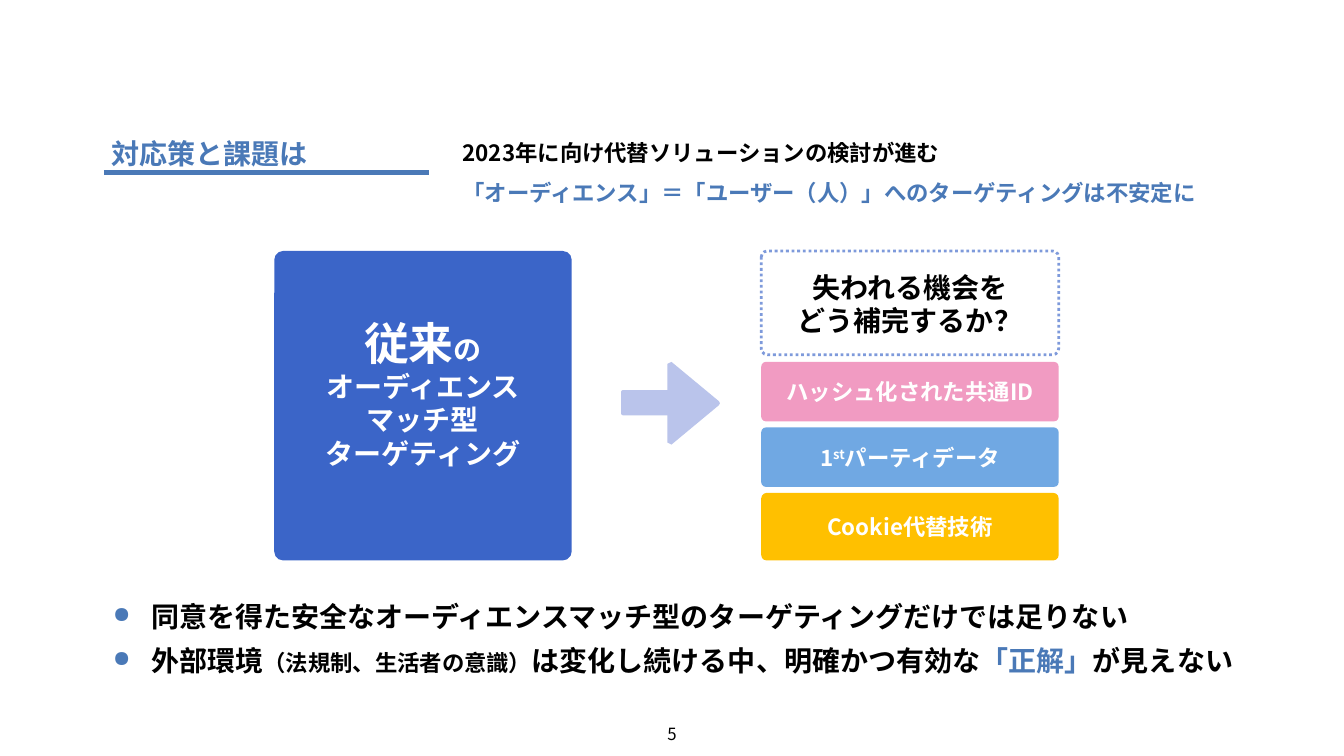
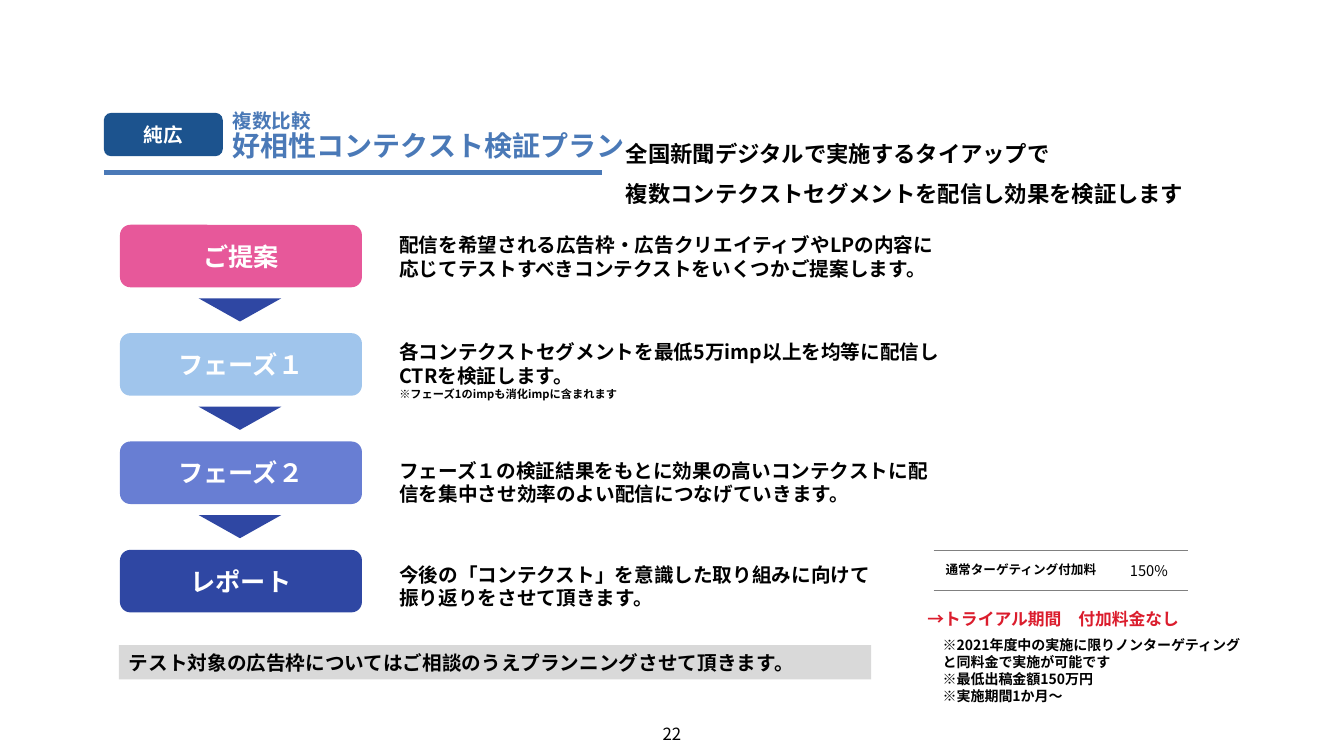
from dataclasses import dataclass

from lxml.etree import SubElement
from pptx import Presentation
from pptx.dml.color import RGBColor
from pptx.enum.dml import MSO_LINE
from pptx.enum.shapes import MSO_CONNECTOR, MSO_SHAPE
from pptx.enum.text import MSO_ANCHOR, MSO_AUTO_SIZE, PP_ALIGN
from pptx.oxml.ns import qn
from pptx.util import Inches, Pt


@dataclass(frozen=True)
class Theme:
    font: str = "Noto Sans CJK JP"
    black: str = "000000"
    white: str = "FFFFFF"
    accent: str = "4A79B7"
    tag: str = "1C538E"
    royal: str = "3B65C8"
    navy: str = "2F47A3"
    periwinkle: str = "687ED3"
    pale_blue: str = "A0C5EC"
    sky: str = "70A8E3"
    dots: str = "7E9ADB"
    lavender: str = "BAC4EB"
    pink: str = "F19BC2"
    magenta: str = "E7589A"
    amber: str = "FFC000"
    red: str = "DB1D2D"
    band: str = "D9D9D9"
    rule: str = "808080"
    hero: float = 32
    title: float = 20
    step: float = 18
    lead: float = 16
    body: float = 14
    small: float = 12
    price: float = 10.5
    note: float = 10
    label: float = 9
    tiny: float = 8


T = Theme()
MID, TOP = MSO_ANCHOR.MIDDLE, MSO_ANCHOR.TOP
LEFT, CENTER, RIGHT = PP_ALIGN.LEFT, PP_ALIGN.CENTER, PP_ALIGN.RIGHT
PAD = (0.09, 0.09, 0.09, 0.09)
INSET = (0.1, 0.05, 0.1, 0.05)


def rgb(value):
    return RGBColor.from_string(value)


def add_bullet(p):
    pPr = p._p.get_or_add_pPr()
    pPr.set("marL", str(Inches(0.38)))
    pPr.set("indent", str(-Inches(0.38)))
    SubElement(SubElement(pPr, qn("a:buClr")), qn("a:srgbClr"), val=T.accent)
    SubElement(pPr, qn("a:buSzPct"), val="80000")
    SubElement(pPr, qn("a:buChar"), char="●")


def add_run(p, text, size, color, bold, sup=False):
    r = p.add_run()
    r.text = text
    r.font.size = Pt(size)
    r.font.bold = bold
    r.font.name = T.font
    r.font.color.rgb = rgb(color)
    rPr = r._r.get_or_add_rPr()
    SubElement(rPr, qn("a:ea"), typeface=T.font)
    if sup:
        rPr.set("baseline", "30000")


def write(tf, paras, size, color=T.black, bold=True, align=LEFT, spacing=None,
          anchor=MID, inset=INSET, bullets=False):
    tf.vertical_anchor = anchor
    tf.margin_left, tf.margin_top, tf.margin_right, tf.margin_bottom = map(Inches, inset)
    for i, runs in enumerate(paras):
        p = tf.add_paragraph() if i else tf.paragraphs[0]
        if bullets:
            add_bullet(p)
        p.alignment = align
        if spacing:
            p.line_spacing = spacing
        for text, changes in [(runs, {})] if isinstance(runs, str) else runs:
            add_run(p, text, **{"size": size, "color": color, "bold": bold, **changes})


def add_text(s, box, paras, size, wrap=True, grow=True, **style):
    tf = s.shapes.add_textbox(*map(Inches, box)).text_frame
    tf.word_wrap = wrap
    tf.auto_size = MSO_AUTO_SIZE.SHAPE_TO_FIT_TEXT if grow else MSO_AUTO_SIZE.NONE
    write(tf, paras, size, **style)


def paint(sp, fill):
    sp.shadow.inherit = False
    if fill:
        sp.fill.solid()
        sp.fill.fore_color.rgb = rgb(fill)
    else:
        sp.fill.background()
    sp.line.fill.background()


def add_box(s, box, fill=None, kind=MSO_SHAPE.ROUNDED_RECTANGLE, adj=None):
    sp = s.shapes.add_shape(kind, *map(Inches, box))
    paint(sp, fill)
    if adj is not None:
        sp.adjustments[0] = adj
    return sp


def add_label(s, box, fill, text, size, adj=None):
    sp = add_box(s, box, fill, adj=adj)
    write(sp.text_frame, [text], size, color=T.white, align=CENTER)


def add_rule(s, left, right, y, color=T.accent, width=3.5):
    ends = map(Inches, (left, y, right, y))
    line = s.shapes.add_connector(MSO_CONNECTOR.STRAIGHT, *ends)
    line.line.color.rgb = rgb(color)
    line.line.width = Pt(width)
    SubElement(line._element.spPr, qn("a:effectLst"))


def add_frame(prs, number, title, title_box, rule_right, lead, lead_box):
    s = prs.slides.add_slide(prs.slide_layouts[6])
    add_text(s, title_box, title, T.title, wrap=False, color=T.accent, spacing=0.9)
    add_rule(s, 1.03, rule_right, 1.71)
    add_text(s, lead_box, lead, T.lead, spacing=1.5, anchor=TOP)
    add_text(s, (6.23, 7.08, 0.87, 0.4), [number], T.small, grow=False,
             bold=False, align=CENTER)
    return s


def add_block_arrow(s):
    head = [(6.66, 3.59), (7.13, 3.98), (7.14, 4), (7.13, 4.02),
            (6.66, 4.41), (6.62, 4.39), (6.62, 3.61)]
    points = [(Inches(x), Inches(y)) for x, y in head]
    builder = s.shapes.build_freeform(*points[0])
    builder.add_line_segments(points[1:], close=True)
    paint(builder.convert_to_shape(), T.lavender)
    add_box(s, (6.16, 3.87, 0.61, 0.25), T.lavender, adj=0.08)


def build_issues(prs):
    s = add_frame(
        prs, "5", ["対応策と課題は"], (1.01, 1.34, 2.17, 0.41), 4.25,
        ["2023年に向け代替ソリューションの検討が進む",
         [("「オーディエンス」＝「ユーザー（人）」へのターゲティングは不安定に",
           {"color": T.accent})]],
        (4.49, 1.2, 8.53, 0.87))

    past = add_box(s, (2.72, 2.49, 2.95, 3.07), T.royal, adj=0.03)
    write(past.text_frame,
          [[("従来", {"size": T.hero}), ("の", {})],
           "オーディエンス", "マッチ型", "ターゲティング"],
          T.title, color=T.white, align=CENTER, inset=(0.1, 0.05, 0.1, 0.31))
    add_block_arrow(s)

    question = add_box(s, (7.55, 2.49, 2.95, 1.03), adj=0.06)
    question.line.color.rgb = rgb(T.dots)
    question.line.width = Pt(2)
    question.line.dash_style = MSO_LINE.ROUND_DOT
    write(question.text_frame, ["失われる機会を", "どう補完するか？"], T.title,
          align=CENTER, inset=(0.1, 0.02, 0.1, 0))

    options = [
        (T.pink, 0.59, "ハッシュ化された共通ID"),
        (T.sky, 0.59, [("1", {}), ("st", {"sup": True}), ("パーティデータ", {})]),
        (T.amber, 0.67, "Cookie代替技術"),
    ]
    for i, (fill, height, text) in enumerate(options):
        add_label(s, (7.55, 3.59 + 0.65 * i, 2.95, height), fill, text, T.lead, adj=0.08)

    add_text(s, (1.03, 5.75, 11.96, 1.06),
             ["同意を得た安全なオーディエンスマッチ型のターゲティングだけでは足りない",
              [("外部環境", {}), ("（法規制、生活者の意識）", {"size": T.lead}),
               ("は変化し続ける中、明確かつ有効な", {}),
               ("「正解」", {"color": T.accent}), ("が見えない", {})]],
             T.title, spacing=1.3, inset=PAD, bullets=True)


def add_steps(s):
    steps = [
        ("ご提案", T.magenta, (2.22, 5.56, 0.65),
         ["配信を希望される広告枠・広告クリエイティブやLPの内容に応じて"
          "テストすべきコンテクストをいくつかご提案します。"]),
        ("フェーズ１", T.pale_blue, (3.28, 5.66, 0.79),
         ["各コンテクストセグメントを最低5万imp以上を均等に配信しCTRを検証します。",
          [("※フェーズ1のimpも消化impに含まれます", {"size": T.tiny})]]),
        ("フェーズ２", T.periwinkle, (4.46, 5.56, 0.65),
         ["フェーズ１の検証結果をもとに効果の高いコンテクストに"
          "配信を集中させ効率のよい配信につなげていきます。"]),
        ("レポート", T.navy, (5.49, 5.88, 0.65),
         ["今後の「コンテクスト」を意識した取り組みに向けて", "振り返りをさせて頂きます。"]),
    ]
    for i, (name, fill, (top, width, height), paras) in enumerate(steps):
        y = 2.23 + 1.075 * i
        add_label(s, (1.19, y, 2.4, 0.62), fill, name, T.step)
        add_text(s, (3.87, top, width, height), paras, T.body, inset=PAD)
        if i < len(steps) - 1:
            pointer = add_box(s, (1.97, y + 0.73, 0.82, 0.23), T.navy,
                              MSO_SHAPE.FLOWCHART_MERGE)


def add_pricing(s):
    for y in (5.46, 5.86):
        add_rule(s, 9.26, 11.78, y, T.rule, 0.5)
    add_text(s, (9.28, 5.53, 1.85, 0.25), ["通常ターゲティング付加料"], T.label, anchor=TOP)
    add_text(s, (10.44, 5.52, 1.24, 0.28), ["150%"], T.price, bold=False, align=RIGHT)
    add_text(s, (9.1, 5.99, 2.86, 0.3), ["→トライアル期間　付加料金なし"], T.small,
             color=T.red)
    add_text(s, (9.26, 6.22, 3.15, 0.86),
             ["※2021年度中の実施に限りノンターゲティングと同料金で実施が可能です",
              "※最低出稿金額150万円", "※実施期間1か月～"], T.note, inset=PAD)


def build_plan(prs):
    s = add_frame(
        prs, "22",
        [[("複数比較", {"size": T.body})], "好相性コンテクスト検証プラン"],
        (2.21, 1.05, 4.13, 0.62), 5.97,
        ["全国新聞デジタルで実施するタイアップで",
         "複数コンテクストセグメントを配信し効果を検証します"],
        (6.11, 1.21, 6.22, 0.87))
    add_label(s, (1.03, 1.12, 1.18, 0.43), T.tag, "純広", T.body)
    add_steps(s)
    band = add_box(s, (1.18, 6.4, 7.46, 0.34), T.band, MSO_SHAPE.RECTANGLE)
    write(band.text_frame,
          ["テスト対象の広告枠についてはご相談のうえプランニングさせて頂きます。"], T.body)
    add_pricing(s)


def main():
    prs = Presentation()
    prs.slide_width, prs.slide_height = Inches(13.33), Inches(7.5)
    build_issues(prs)
    build_plan(prs)
    prs.save("out.pptx")


if __name__ == "__main__":
    main()
